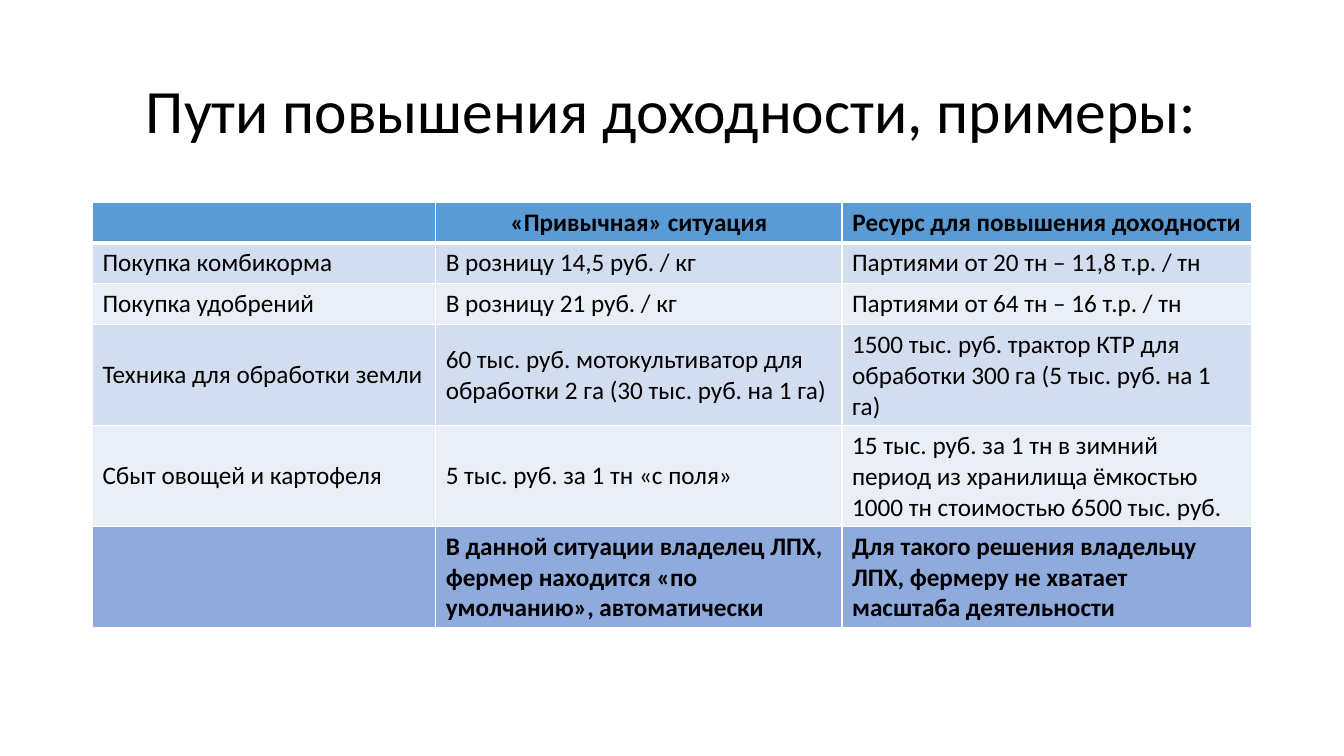
from lxml.etree import SubElement
from pptx import Presentation
from pptx.dml.color import RGBColor
from pptx.enum.text import MSO_ANCHOR, PP_ALIGN
from pptx.oxml.ns import qn
from pptx.util import Cm, Pt


def add_run(paragraph, text, size, bold=False):
    run = paragraph.add_run()
    run.text = text
    run.font.name = "Calibri"
    run.font.size = Pt(size)
    run.font.bold = bold
    run.font.color.rgb = RGBColor.from_string("000000")


def add_border(cell, side, points, color):
    """Draw one side (L, R, T or B) of a cell; call before setting the fill."""
    line = SubElement(cell._tc.get_or_add_tcPr(), qn(f"a:ln{side}"), w=str(Pt(points)))
    fill = SubElement(line, qn("a:solidFill"))
    SubElement(fill, qn("a:srgbClr"), val=color)


presentation = Presentation()
presentation.slide_width = Cm(33.87)
presentation.slide_height = Cm(19.05)
slide = presentation.slides.add_slide(presentation.slide_layouts[6])

# Title
title = slide.shapes.add_textbox(Cm(2.33), Cm(1.01), Cm(29.21), Cm(3.68))
title.text_frame.word_wrap = True
title.text_frame.vertical_anchor = MSO_ANCHOR.MIDDLE
paragraph = title.text_frame.paragraphs[0]
paragraph.alignment = PP_ALIGN.CENTER
paragraph.line_spacing = 0.9
add_run(paragraph, "Пути повышения доходности, примеры:", 44)

# Table: row height, fill, texts
rows = [
    (1.03, "5B9BD5", ["", "«Привычная» ситуация", "Ресурс для повышения доходности"]),
    (1.03, "D2DEEF", ["Покупка комбикорма", "В розницу 14,5 руб. / кг",
                      "Партиями от 20 тн – 11,8 т.р. / тн"]),
    (1.03, "EAEFF7", ["Покупка удобрений", "В розницу 21 руб. / кг",
                      "Партиями от 64 тн – 16 т.р. / тн"]),
    (2.54, "D2DEEF", ["Техника для обработки земли",
                      "60 тыс. руб. мотокультиватор для обработки 2 га (30 тыс. руб. на 1 га)",
                      "1500 тыс. руб. трактор КТР для обработки 300 га (5 тыс. руб. на 1 га)"]),
    (2.54, "EAEFF7", ["Сбыт овощей и картофеля", "5 тыс. руб. за 1 тн «с поля»",
                      "15 тыс. руб. за 1 тн в зимний период из хранилища ёмкостью "
                      "1000 тн стоимостью 6500 тыс. руб."]),
    (2.54, "8FAADC", ["",
                      "В данной ситуации владелец ЛПХ, фермер находится «по умолчанию», автоматически",
                      "Для такого решения владельцу ЛПХ, фермеру не хватает масштаба деятельности"]),
]
column_widths = [8.65, 10.24, 10.32]
last_row = len(rows) - 1

table = slide.shapes.add_table(
    len(rows), len(column_widths), Cm(2.33), Cm(5.09),
    Cm(sum(column_widths)), Cm(sum(height for height, _, _ in rows))).table
for column, width in zip(table.columns, column_widths):
    column.width = Cm(width)

for row_index, (height, fill_color, texts) in enumerate(rows):
    table.rows[row_index].height = Cm(height)
    is_header = row_index == 0
    for column_index, text in enumerate(texts):
        cell = table.cell(row_index, column_index)
        for side in "LRTB":
            heavy = (is_header and side == "B") or (row_index == 1 and side == "T")
            add_border(cell, side, 3 if heavy else 1, "FFFFFF")
        cell.fill.solid()
        cell.fill.fore_color.rgb = RGBColor.from_string(fill_color)
        cell.vertical_anchor = MSO_ANCHOR.TOP if is_header else MSO_ANCHOR.MIDDLE
        paragraph = cell.text_frame.paragraphs[0]
        paragraph.alignment = PP_ALIGN.CENTER if is_header else PP_ALIGN.LEFT
        if text:
            add_run(paragraph, text, 18, bold=row_index in (0, last_row))

presentation.save("out.pptx")
